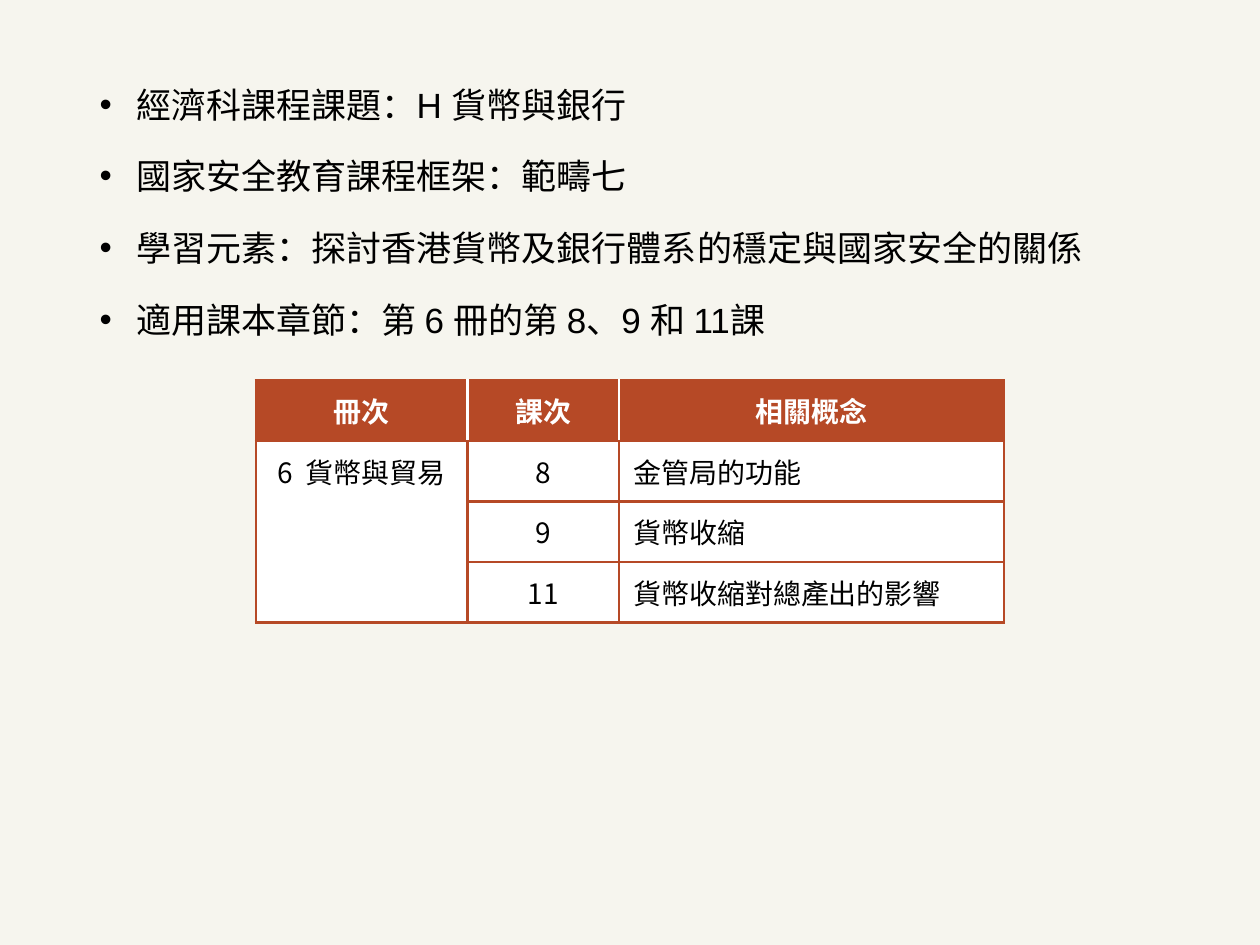
from lxml import etree
from pptx import Presentation
from pptx import util as u
from pptx.dml.color import RGBColor
from pptx.enum import text
from pptx.oxml import ns

PAPER = RGBColor(0xF6, 0xF5, 0xEE)
RUST = RGBColor(0xB6, 0x49, 0x26)
WHITE = RGBColor(0xFF, 0xFF, 0xFF)
BLACK = RGBColor(0, 0, 0)
MID = text.PP_ALIGN.CENTER
LEFT = text.PP_ALIGN.LEFT

POINTS = [
    "經濟科課程課題：H 貨幣與銀行",
    "國家安全教育課程框架：範疇七",
    "學習元素：探討香港貨幣及銀行體系的穩定與國家安全的關係",
    "適用課本章節：第 6 冊的第 8、9 和 11課",
]
ROWS = [
    ["冊次", "課次", "相關概念"],
    ["6\t貨幣與貿易", "8", "金管局的功能"],
    ["", "9", "貨幣收縮"],
    ["", "11", "貨幣收縮對總產出的影響"],
]
COLS = [1.68, 1.2, 3.06]


def add(parent, tag, **attrs):
    return etree.SubElement(parent, ns.qn(tag), **attrs)


def write(para, words, font="Arial", size=20, color=BLACK, bold=False,
          align=LEFT, hang=0, line=None, before=0, bullet=None, tab=None):
    run = para.add_run()
    run.text = words
    run.font.name = font
    run.font.size = u.Pt(size)
    run.font.color.rgb = color
    run.font.bold = bold
    para.alignment = align
    para.space_before = u.Pt(before)
    if line:
        para.line_spacing = u.Pt(line)
    props = para._p.get_or_add_pPr()
    props.set("marL", str(u.Inches(hang)))
    props.set("indent", str(-u.Inches(hang)))
    if bullet:
        add(props, "a:buFont", typeface="Arial")
        add(props, "a:buChar", char=bullet)
    if tab:
        stops = add(props, "a:tabLst")
        add(stops, "a:tab", pos=str(u.Inches(tab)), algn="r")


class Deck:
    font = "Noto Sans CJK SC"

    def __init__(self):
        self.show = Presentation()
        self.show.slide_width = u.Inches(10)
        self.show.slide_height = u.Inches(7.5)
        self.slide = self.show.slides.add_slide(self.show.slide_layouts[1])
        fill = self.slide.background.fill
        fill.solid()
        fill.fore_color.rgb = PAPER
        title = self.slide.shapes.title._element
        title.getparent().remove(title)

    def body(self, points, left, top, width, height):
        box = self.slide.placeholders[1]
        box.left, box.top = u.Inches(left), u.Inches(top)
        box.width, box.height = u.Inches(width), u.Inches(height)
        frame = box.text_frame
        frame.auto_size = text.MSO_AUTO_SIZE.NONE
        for i, words in enumerate(points):
            para = frame.add_paragraph() if i else frame.paragraphs[0]
            write(para, words, hang=0.29, line=29, before=12, bullet="•")

    def edge(self, cell, side, color):
        line = add(cell._tc.get_or_add_tcPr(), "a:ln" + side,
                   w=str(u.Pt(1.5)))
        fill = add(line, "a:solidFill")
        add(fill, "a:srgbClr", val=str(color))

    def cell(self, cell, words, row, col):
        head = row == 0
        cell.margin_left = cell.margin_right = u.Inches(0.12)
        cell.margin_top = cell.margin_bottom = u.Inches(0.08)
        inner = {"L": head and col > 0, "R": head and col < len(COLS) - 1}
        for side in "LRTB":
            self.edge(cell, side, WHITE if inner.get(side) else RUST)
        cell.fill.solid()
        cell.fill.fore_color.rgb = RUST if head else WHITE
        if words:
            write(cell.text_frame.paragraphs[0], words, font=self.font,
                  size=16, color=WHITE if head else BLACK, bold=head,
                  align=MID if head or col < 2 else LEFT,
                  hang=0.22 if "\t" in words else 0, tab=5.75)

    def table(self, rows, left, top, high):
        grid = self.slide.shapes.add_table(
            len(rows), len(COLS), u.Inches(left), u.Inches(top),
            u.Inches(sum(COLS)), u.Inches(high * len(rows))).table
        for col, width in zip(grid.columns, COLS):
            col.width = u.Inches(width)
        for r, row in enumerate(rows):
            for c, words in enumerate(row):
                self.cell(grid.cell(r, c), words, r, c)
        grid.cell(1, 0).merge(grid.cell(len(rows) - 1, 0))


def main():
    deck = Deck()
    deck.body(POINTS, 0.69, 0.54, 8.62, 2.86)
    deck.table(ROWS, 2.03, 3.02, 0.48)
    deck.show.save("out.pptx")


if __name__ == "__main__":
    main()
